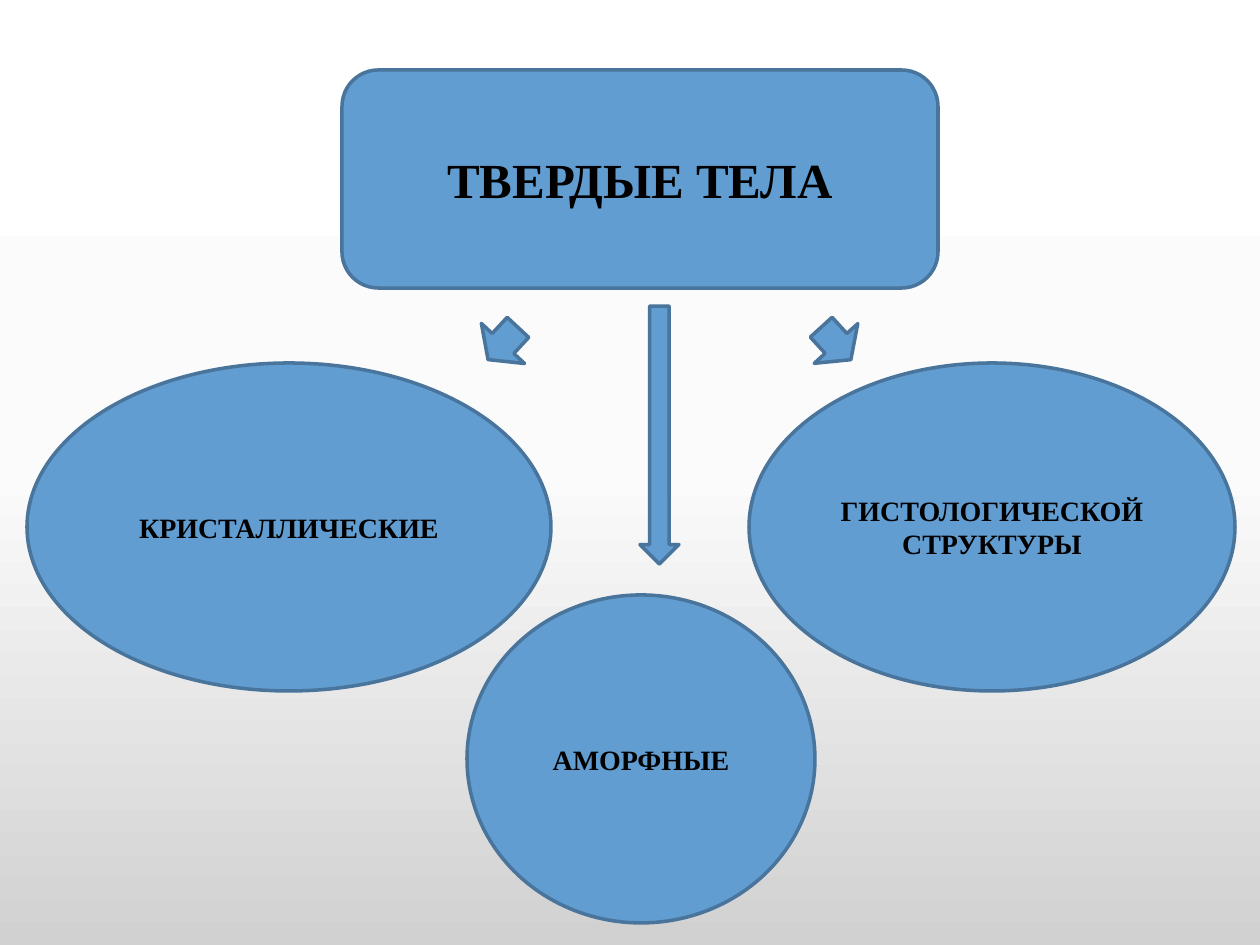
from copy import deepcopy

from pptx import Presentation
from pptx.dml.color import RGBColor
from pptx.enum.shapes import MSO_SHAPE
from pptx.enum.text import MSO_ANCHOR, PP_ALIGN
from pptx.util import Pt

PX = 914400 / 126
PAGE_BOX = (0, 0, 1260, 945)
FONT = "Times New Roman"

BLUE = RGBColor(0x62, 0x9D, 0xD1)
OUTLINE = RGBColor(0x49, 0x74, 0x9B)
BLACK = RGBColor(0x00, 0x00, 0x00)
BACKGROUND = (
    (0, RGBColor(0xFF, 0xFF, 0xFF)),
    (0.5, RGBColor(0xFB, 0xFB, 0xFB)),
    (1, RGBColor(0xD1, 0xD1, 0xD1)),
)

ROUNDED = MSO_SHAPE.ROUNDED_RECTANGLE
OVAL = MSO_SHAPE.OVAL
DOWN_ARROW = MSO_SHAPE.DOWN_ARROW
RIGHT_ARROW = MSO_SHAPE.RIGHT_ARROW
MIDDLE = MSO_ANCHOR.MIDDLE
CENTER = PP_ALIGN.CENTER


def px(length):
    return round(length * PX)


def paint_background(page):
    fill = page.background.fill
    fill.gradient()
    fill.gradient_angle = 270
    first_stop = fill.gradient_stops[0]._gs
    first_stop.addnext(deepcopy(first_stop))
    for stop, (position, color) in zip(fill.gradient_stops, BACKGROUND):
        stop.position = position
        stop.color.rgb = color


def add_figure(page, kind, box, rotation=0):
    shape = page.shapes.add_shape(kind, *map(px, box))
    shape.rotation = rotation
    shape.shadow.inherit = False
    shape.fill.solid()
    shape.fill.fore_color.rgb = BLUE
    shape.line.color.rgb = OUTLINE
    shape.line.width = Pt(2)
    return shape


def add_label(shape, text, size):
    frame = shape.text_frame
    frame.word_wrap = True
    frame.vertical_anchor = MIDDLE
    para = frame.paragraphs[0]
    para.alignment = CENTER
    span = para.add_run()
    span.text = text
    span.font.name = FONT
    span.font.size = Pt(size)
    span.font.bold = True
    span.font.color.rgb = BLACK


def add_heading(page, box):
    add_label(add_figure(page, ROUNDED, box), "ТВЕРДЫЕ ТЕЛА", 28)


def add_kinds(page, box):
    """Three ovals of equal height: two at the sides, one lower between them."""
    left, top, width, height = box
    oval_height = 328
    right_width = 486
    low_top = top + height - oval_height
    for text, x, y, oval_width in (
        ("КРИСТАЛЛИЧЕСКИЕ", left, top, 524),
        ("АМОРФНЫЕ", left + 440, low_top, 348),
        ("ГИСТОЛОГИЧЕСКОЙ СТРУКТУРЫ", left + width - right_width, top, right_width),
    ):
        oval = add_figure(page, OVAL, (x, y, oval_width, oval_height))
        add_label(oval, text, 16)


def add_arrows(page, box):
    """A long arrow down and a short slanting one at each end of the box."""
    left, top, width, height = box
    short_width, short_height = 44, 59
    add_figure(page, DOWN_ARROW, (left + 159, top, 39, height))
    for x, rotation in ((left + width - short_width, 47.6), (left, 132.9)):
        add_figure(page, RIGHT_ARROW, (x, top + 8, short_width, short_height), rotation)


def build_solids_page(page, box):
    left, top = box[:2]
    paint_background(page)
    add_heading(page, (left + 342, top + 70, 596, 218))
    add_kinds(page, (left + 27, top + 363, 1208, 560))
    add_arrows(page, (left + 481, top + 306, 377, 258))


def main():
    deck = Presentation()
    deck.slide_width, deck.slide_height = map(px, PAGE_BOX[2:])
    page = deck.slides.add_slide(deck.slide_layouts[6])
    build_solids_page(page, PAGE_BOX)
    deck.save("out.pptx")


if __name__ == "__main__":
    main()
